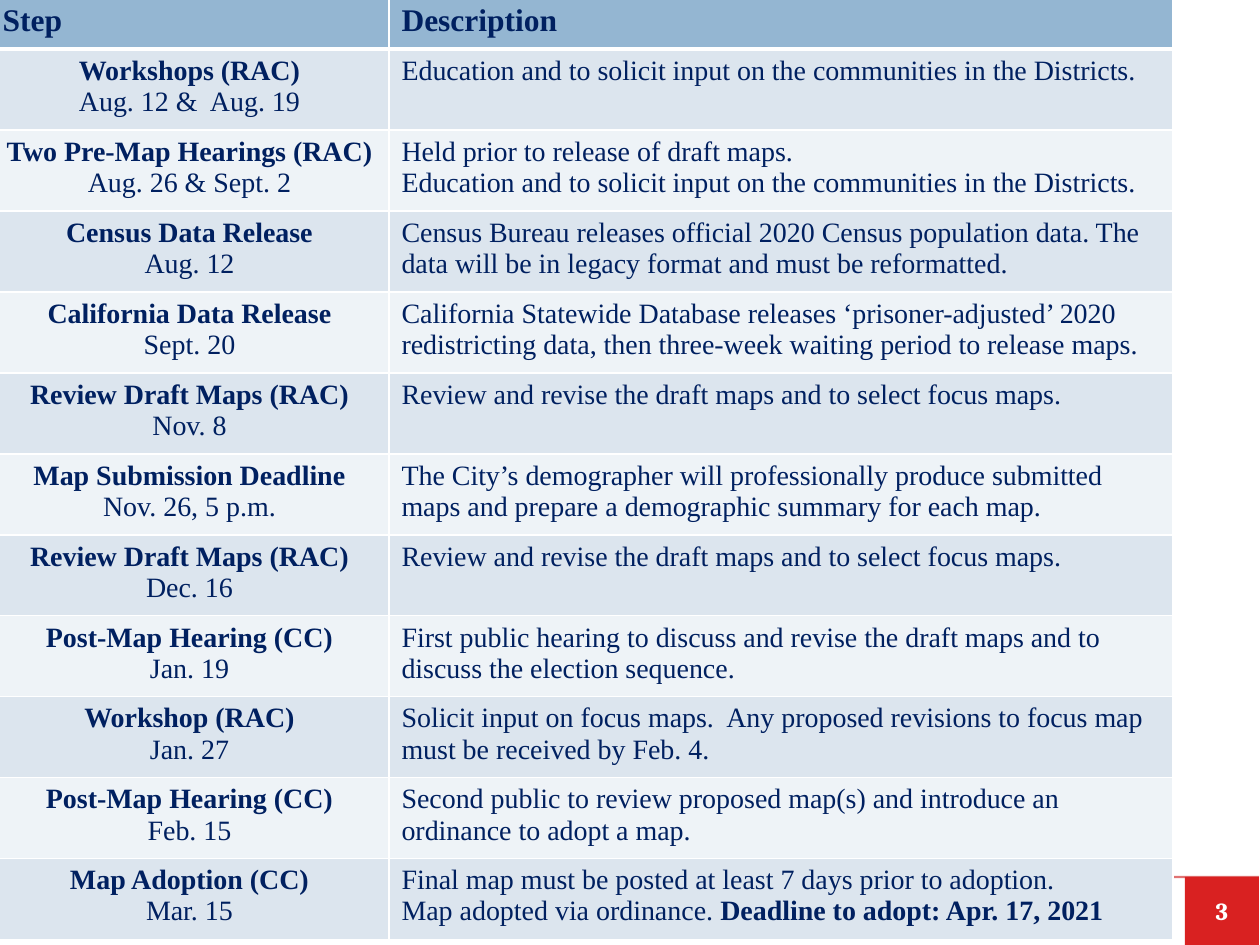
import dataclasses

import lxml.etree
import pptx
import pptx.dml.color
import pptx.enum.shapes
import pptx.enum.text
import pptx.oxml.ns
import pptx.util

SLIDE_WIDTH, SLIDE_HEIGHT = 1260, 945
EMU_PER_PX = 914400 / 126
CENTER = pptx.enum.text.PP_ALIGN.CENTER
LEFT = pptx.enum.text.PP_ALIGN.LEFT

HEADINGS = ["Step", "Description"]
COLUMN_WIDTHS = [399, 784]
HEADER_HEIGHT, ROW_HEIGHT = 52, 81

# Each step: name, date, description paragraphs; "|" starts the bold ending.
STEPS = [
    ("Workshops (RAC)", "Aug. 12 &  Aug. 19",
     ["Education and to solicit input on the communities in the Districts."]),
    ("Two Pre-Map Hearings (RAC)", "Aug. 26 & Sept. 2",
     ["Held prior to release of draft maps.",
      "Education and to solicit input on the communities in the Districts."]),
    ("Census Data Release", "Aug. 12",
     ["Census Bureau releases official 2020 Census population data. "
      "The data will be in legacy format and must be reformatted."]),
    ("California Data Release", "Sept. 20",
     ["California Statewide Database releases ‘prisoner-adjusted’ 2020 "
      "redistricting data, then three-week waiting period to release maps."]),
    ("Review Draft Maps (RAC)", "Nov. 8",
     ["Review and revise the draft maps and to select focus maps."]),
    ("Map Submission Deadline", "Nov. 26, 5 p.m.",
     ["The City’s demographer will professionally produce submitted "
      "maps and prepare a demographic summary for each map."]),
    ("Review Draft Maps (RAC)", "Dec. 16",
     ["Review and revise the draft maps and to select focus maps."]),
    ("Post-Map Hearing (CC)", "Jan. 19",
     ["First public hearing to discuss and revise the draft maps and to "
      "discuss the election sequence."]),
    ("Workshop (RAC)", "Jan. 27",
     ["Solicit input on focus maps.  Any proposed revisions to focus map "
      "must be received by Feb. 4."]),
    ("Post-Map Hearing (CC)", "Feb. 15",
     ["Second public to review proposed map(s) and introduce an "
      "ordinance to adopt a map."]),
    ("Map Adoption (CC)", "Mar. 15",
     ["Final map must be posted at least 7 days prior to adoption.",
      "Map adopted via ordinance. |Deadline to adopt: Apr. 17, 2021"]),
]


@dataclasses.dataclass(frozen=True)
class Theme:
    text: str = "002060"
    header: str = "94B6D2"
    bands: tuple = ("DCE5EE", "EEF3F7")
    white: str = "FFFFFF"
    badge: str = "D92121"
    rule: str = "C80000"
    table_font: str = "Times New Roman"
    badge_font: str = "Cambria"
    header_size: int = 18
    body_size: int = 16
    badge_size: int = 14


def px(length):
    return pptx.util.Emu(round(length * EMU_PER_PX))


def rgb(color):
    return pptx.dml.color.RGBColor.from_string(color)


def add_element(parent, tag, **attributes):
    return lxml.etree.SubElement(parent, pptx.oxml.ns.qn(tag), attributes)


class SlideBuilder:
    """Holds the theme and the slide being drawn."""

    def __init__(self, slide, theme):
        self.slide = slide
        self.theme = theme

    def fill_text(self, text_frame, paragraphs, font, size, color, alignment):
        """Fill the frame; each paragraph is a list of (text, bold) runs."""
        for index, runs in enumerate(paragraphs):
            paragraph = text_frame.paragraphs[0] if index == 0 else text_frame.add_paragraph()
            paragraph.alignment = alignment
            for text, bold in runs:
                run = paragraph.add_run()
                run.text = text
                run.font.name = font
                run.font.size = pptx.util.Pt(size)
                run.font.bold = bold
                run.font.color.rgb = rgb(color)

    def rule(self, left, right, top, points, opacity):
        line = self.slide.shapes.add_connector(
            pptx.enum.shapes.MSO_CONNECTOR.STRAIGHT, px(left), px(top), px(right), px(top))
        line.line.width = pptx.util.Pt(points)
        line.line.color.rgb = rgb(self.theme.rule)
        color = line.element.find(".//" + pptx.oxml.ns.qn("a:srgbClr"))
        add_element(color, "a:alpha", val=str(opacity * 1000))
        add_element(line.element.spPr, "a:effectLst")

    def page_badge(self, left, top, width, height, number):
        badge = self.slide.shapes.add_shape(
            pptx.enum.shapes.MSO_SHAPE.RECTANGLE, px(left), px(top), px(width), px(height))
        badge.shadow.inherit = False
        badge.fill.solid()
        badge.fill.fore_color.rgb = rgb(self.theme.badge)
        badge.line.fill.background()
        badge.text_frame.vertical_anchor = pptx.enum.text.MSO_ANCHOR.MIDDLE
        self.fill_text(badge.text_frame, [[(number, True)]], self.theme.badge_font,
                       self.theme.badge_size, self.theme.white, CENTER)

    def cell(self, cell, paragraphs, size, fill, alignment, top=1, bottom=1):
        """Style one cell; top and bottom are border widths in points."""
        properties = cell._tc.get_or_add_tcPr()
        for side, points in (("L", 1), ("R", 1), ("T", top), ("B", bottom)):
            border = add_element(properties, "a:ln" + side, w=str(int(pptx.util.Pt(points))))
            add_element(add_element(border, "a:solidFill"), "a:srgbClr", val=self.theme.white)
        cell.fill.solid()
        cell.fill.fore_color.rgb = rgb(fill)
        self.fill_text(cell.text_frame, paragraphs, self.theme.table_font, size,
                       self.theme.text, alignment)

    def schedule(self, left, top, headings, steps):
        height = HEADER_HEIGHT + ROW_HEIGHT * len(steps)
        table = self.slide.shapes.add_table(
            len(steps) + 1, len(headings), px(left), px(top),
            px(sum(COLUMN_WIDTHS)), px(height)).table
        for column, width in zip(table.columns, COLUMN_WIDTHS):
            column.width = px(width)
        for index, row in enumerate(table.rows):
            row.height = px(ROW_HEIGHT if index else HEADER_HEIGHT)

        for column, heading in enumerate(headings):
            self.cell(table.cell(0, column), [[(heading, True)]], self.theme.header_size,
                      self.theme.header, LEFT, bottom=3)
        for index, (name, date, description) in enumerate(steps):
            fill = self.theme.bands[index % 2]
            border = 1 if index else 3
            details = [[(part, position > 0) for position, part in enumerate(text.split("|"))]
                       for text in description]
            self.cell(table.cell(index + 1, 0), [[(name, True)], [(date, False)]],
                      self.theme.body_size, fill, CENTER, top=border)
            self.cell(table.cell(index + 1, 1), details,
                      self.theme.body_size, fill, LEFT, top=border)


def main():
    presentation = pptx.Presentation()
    presentation.slide_width = px(SLIDE_WIDTH)
    presentation.slide_height = px(SLIDE_HEIGHT)
    blank_layout = presentation.slide_layouts[6]
    builder = SlideBuilder(presentation.slides.add_slide(blank_layout), Theme())
    builder.rule(179, 1259, 877, points=1.25, opacity=55)
    builder.page_badge(1185, 877, 74, 68, "3")
    builder.schedule(-10, -3, HEADINGS, STEPS)
    presentation.save("out.pptx")


if __name__ == "__main__":
    main()
